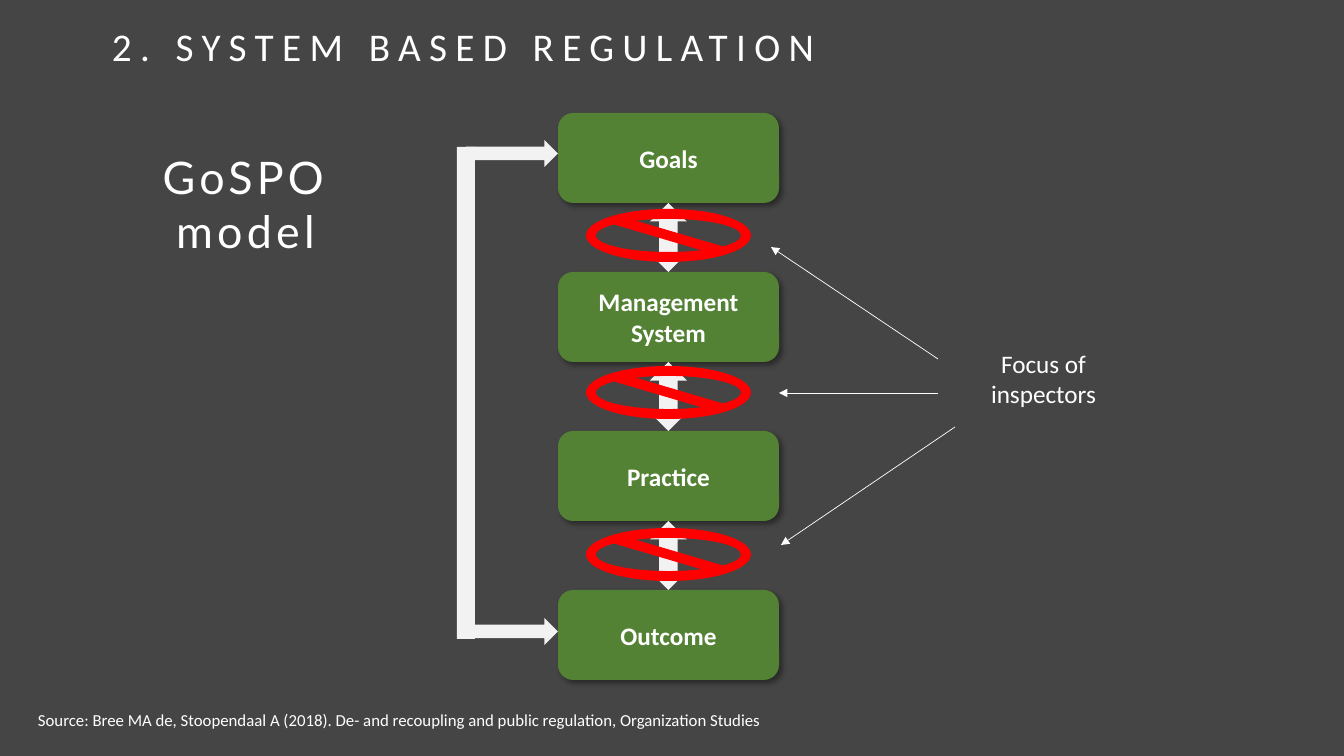
from lxml.etree import SubElement
from pptx import Presentation
from pptx.dml.color import RGBColor
from pptx.enum.shapes import MSO_CONNECTOR, MSO_SHAPE as SHAPE
from pptx.enum.text import MSO_ANCHOR, MSO_AUTO_SIZE, PP_ALIGN as ALIGN
from pptx.oxml import parse_xml
from pptx.oxml.ns import nsdecls, qn
from pptx.util import Pt

EMU_PER_PX = 914400 / 100.8

CHARCOAL = RGBColor(0x45, 0x45, 0x45)
GREEN = RGBColor(0x54, 0x82, 0x35)
PALE = RGBColor(0xF2, 0xF2, 0xF2)
RED = RGBColor(0xFF, 0x00, 0x00)
WHITE = RGBColor(0xFF, 0xFF, 0xFF)

SOFT_SHADOW = (
    f'<a:effectLst {nsdecls("a")}>'
    '<a:outerShdw blurRad="50800" dist="38100" dir="2700000" algn="tl" rotWithShape="0">'
    '<a:srgbClr val="000000"><a:alpha val="40000"/></a:srgbClr>'
    '</a:outerShdw></a:effectLst>'
)


def px(*lengths):
    return [round(length * EMU_PER_PX) for length in lengths]


class SlideBuilder:
    def __init__(self, slide, font="Calibri", ink=WHITE):
        self.slide = slide
        self.font = font
        self.ink = ink

    def background(self, color):
        fill = self.slide.background.fill
        fill.solid()
        fill.fore_color.rgb = color

    def fill_text(self, frame, lines, align, tracking=0, **font_format):
        """Fill a frame with one paragraph per line; tracking is in points."""
        frame.word_wrap = True
        font_format = {"name": self.font, **font_format}
        for index, line in enumerate(lines):
            paragraph = frame.add_paragraph() if index else frame.paragraphs[0]
            paragraph.alignment = align
            run = paragraph.add_run()
            run.text = line
            for key, value in font_format.items():
                setattr(run.font, key, value)
            run.font.color.rgb = self.ink
            if tracking:
                run.font._element.set("spc", str(tracking * 100))

    def shape(self, preset, box, color):
        shape = self.slide.shapes.add_shape(preset, *px(*box))
        shape.shadow.inherit = False
        shape.fill.solid()
        shape.fill.fore_color.rgb = color
        shape.line.fill.background()
        return shape

    def stage(self, box, lines):
        stage = self.shape(SHAPE.ROUNDED_RECTANGLE, box, GREEN)
        properties = stage._element.spPr
        properties.replace(properties.find(qn("a:effectLst")), parse_xml(SOFT_SHADOW))
        stage.text_frame.vertical_anchor = MSO_ANCHOR.MIDDLE
        self.fill_text(stage.text_frame, lines, ALIGN.CENTER, size=Pt(18), bold=True)

    def text(self, box, content, size, align=ALIGN.LEFT, **style):
        frame = self.slide.shapes.add_textbox(*px(*box)).text_frame
        self.fill_text(frame, [content], align, size=Pt(size), **style)
        frame.auto_size = MSO_AUTO_SIZE.SHAPE_TO_FIT_TEXT

    def arrow(self, start, end):
        arrow = self.slide.shapes.add_connector(MSO_CONNECTOR.STRAIGHT, *px(*start, *end))
        arrow.line.color.rgb = self.ink
        arrow.line.width = Pt(0.5)
        properties = arrow._element.spPr
        SubElement(properties.find(qn("a:ln")), qn("a:tailEnd"), type="triangle")
        SubElement(properties, qn("a:effectLst"))


def main():
    deck = Presentation()
    deck.slide_width, deck.slide_height = px(1344, 756)
    builder = SlideBuilder(deck.slides.add_slide(deck.slide_layouts[6]))
    builder.background(CHARCOAL)

    stages = [["Goals"], ["Management", "System"], ["Practice"], ["Outcome"]]
    first_top, stage_height, pitch = 113, 90, 159
    stage_tops = [first_top + pitch * index for index in range(len(stages))]
    for top, lines in zip(stage_tops, stages):
        builder.stage((558, top, 221, stage_height), lines)
    for top in stage_tops[:-1]:
        link_box = (650, top + stage_height, 37, pitch - stage_height)
        builder.shape(SHAPE.UP_DOWN_ARROW, link_box, PALE)

    for top in (140, 618):
        builder.shape(SHAPE.RIGHT_ARROW, (466, top, 92, 27), PALE)
        builder.shape(SHAPE.RECTANGLE, (466, top + 9, 18, 10), PALE)
    builder.shape(SHAPE.RECTANGLE, (457, 147, 18, 492), PALE)

    builder.text((102, 17, 988, 57), "2. SYSTEM BASED REGULATION", 28, tracking=6)
    builder.text(
        (28, 705, 1073, 30),
        "Source: Bree MA de, Stoopendaal A (2018). De- and recoupling "
        "and public regulation, Organization Studies",
        12,
    )
    builder.text((78, 145, 335, 119), "GoSPO model", 32, ALIGN.CENTER, tracking=3, name="Lato")

    for top in (209, 366, 528):
        builder.shape(SHAPE.NO_SYMBOL, (586, top, 165, 53), RED)

    builder.text((938, 343, 211, 72), "Focus of inspectors", 18, ALIGN.CENTER)
    focus_arrows = [
        ((938, 359), (771, 247)),
        ((938, 393), (779, 393)),
        ((955, 427), (781, 545)),
    ]
    for start, end in focus_arrows:
        builder.arrow(start, end)

    deck.save("out.pptx")


if __name__ == "__main__":
    main()
